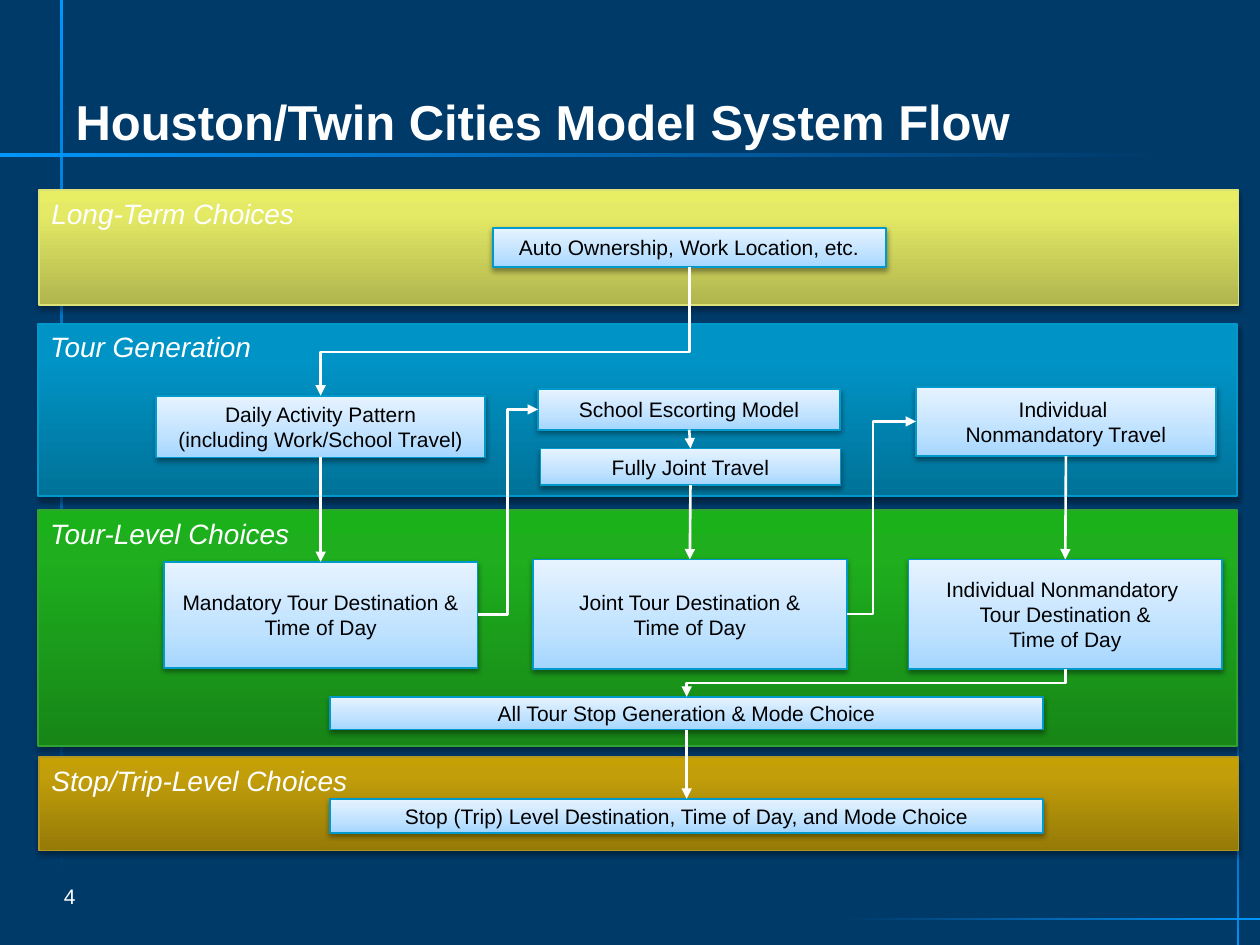
"""Build the travel model system flow slide on a grid of 100 columns by 75 rows."""
from typing import Any, NamedTuple

from lxml.etree import SubElement
from pptx import Presentation
from pptx.dml.color import RGBColor
from pptx.enum.shapes import MSO_CONNECTOR, MSO_SHAPE
from pptx.enum.text import MSO_ANCHOR, PP_ALIGN
from pptx.oxml.ns import qn
from pptx.util import Inches, Pt

WHITE, BLACK, NAVY, EDGE = "FFFFFF", "000000", "003A69", "0099CC"
BOX_STOPS = [(0, "A5D6FF"), (35, "BFE2FF"), (100, "E7F3FF")]
GUIDE_STOPS = [(0, "0099FF"), (100, "0C92FF", 0)]
TOP, LEFT, BOTTOM, RIGHT = range(4)

presentation = Presentation()
presentation.slide_width, presentation.slide_height = Inches(10), Inches(7.5)
COLUMN = presentation.slide_width / 100
ROW = presentation.slide_height / 75


class Area(NamedTuple):
    left: float
    top: float
    width: float
    height: float


class Guide(NamedTuple):
    area: Area
    rotation: int


class Panel(NamedTuple):
    text: str
    area: Area
    edge: str
    shades: tuple


class Box(NamedTuple):
    text: str
    area: Area


class Link(NamedTuple):
    begin: str
    begin_site: int
    end: str
    end_site: int
    bend: float = 0


GUIDES = [
    Guide(Area(45.2, -34.7, 0.25, 94), 270),
    Guide(Area(4.8, -0.9, 0.2, 70.7), 0),
    Guide(Area(83.8, 56.2, 0.1, 33.5), 90),
    Guide(Area(98.2, 50.4, 0.1, 26.4), 180),
]
PANELS = [
    Panel("Long-Term Choices", Area(3.1, 15.1, 95.2, 9.1), "DDE278",
          ("B0B54E", "E4EA65", "E7EE63")),
    Panel("Tour Generation", Area(3, 25.7, 95.2, 13.7), EDGE,
          ("007298", "0094C6", "0095C7")),
    Panel("Tour-Level Choices", Area(3, 40.5, 95.2, 18.7), "30A230",
          ("178617", "1EAE1E", "1BB11B")),
    Panel("Stop/Trip-Level Choices", Area(3.1, 60.1, 95.2, 7.4), "B29620",
          ("957A08", "C29E0A", "C6A106")),
]
BOXES = {
    "ownership": Box("Auto Ownership, Work Location, etc.", Area(39.1, 18.1, 31.2, 3.1)),
    "daily": Box("Daily Activity Pattern\n(including Work/School Travel)",
                 Area(12.4, 31.4, 26.1, 4.9)),
    "school": Box("School Escorting Model", Area(42.7, 30.9, 24, 3.2)),
    "joint": Box("Fully Joint Travel", Area(42.9, 35.6, 23.8, 2.9)),
    "individual": Box("Individual \nNonmandatory Travel", Area(72.7, 30.7, 23.8, 5.5)),
    "mandatory tour": Box("Mandatory Tour Destination &\nTime of Day",
                          Area(13, 44.6, 24.9, 8.4)),
    "joint tour": Box("Joint Tour Destination &\nTime of Day", Area(42.3, 44.4, 24.9, 8.7)),
    "individual tour": Box("Individual Nonmandatory \nTour Destination &\nTime of Day",
                           Area(72.1, 44.4, 24.9, 8.7)),
    "all tours": Box("All Tour Stop Generation & Mode Choice", Area(26.2, 55.3, 56.6, 2.6)),
    "stops": Box("Stop (Trip) Level Destination, Time of Day, and Mode Choice",
                 Area(26.2, 63.4, 56.6, 2.7)),
}
LINKS = [
    Link("daily", BOTTOM, "mandatory tour", TOP),
    Link("school", BOTTOM, "joint", TOP),
    Link("joint", BOTTOM, "joint tour", TOP),
    Link("individual", BOTTOM, "individual tour", TOP),
    Link("all tours", BOTTOM, "stops", TOP),
    Link("mandatory tour", RIGHT, "school", LEFT, 0.5),
    Link("joint tour", RIGHT, "individual", LEFT, 0.38),
    Link("ownership", BOTTOM, "daily", TOP, 0.66),
    Link("individual tour", BOTTOM, "all tours", TOP, 0.5),
]


def color(value: str) -> RGBColor:
    """Turn a hex string into a colour."""
    return RGBColor.from_string(value)


def place(area: Area) -> tuple:
    """Turn grid columns and rows into slide lengths."""
    return (round(area.left * COLUMN), round(area.top * ROW),
            round(area.width * COLUMN), round(area.height * ROW))


def apply(target: Any, values: dict) -> None:
    """Set each named attribute on the target."""
    for name, value in values.items():
        setattr(target, name, value)


def write(shape: Any, text: str, size: float, ink: str, align: PP_ALIGN,
          anchor: MSO_ANCHOR, **style: bool) -> None:
    """Put formatted text in a shape."""
    apply(shape.text_frame, {"word_wrap": True, "vertical_anchor": anchor})
    paragraph = shape.text_frame.paragraphs[0]
    paragraph.text = text
    paragraph.alignment = align
    for run in paragraph.runs:
        apply(run.font, {"name": "Arial", "size": Pt(size), **style})
        run.font.color.rgb = color(ink)


def add_gradient_rectangle(slide: Any, area: Area, stops: list, angle: int) -> Any:
    """Draw a rectangle with a linear gradient of (share, colour, opacity) stops."""
    shape = slide.shapes.add_shape(MSO_SHAPE.RECTANGLE, *place(area))
    shape.shadow.inherit = False
    shape.fill.gradient()
    shape.fill.gradient_angle = angle
    stop_list = shape._element.spPr.find(".//" + qn("a:gsLst"))
    for old_stop in list(stop_list):
        stop_list.remove(old_stop)
    for share, value, *opacity in stops:
        stop = SubElement(stop_list, qn("a:gs"), pos=str(share * 1000))
        shade = SubElement(stop, qn("a:srgbClr"), val=value)
        for percent in opacity:
            SubElement(shade, qn("a:alpha"), val=str(percent * 1000))
    return shape


def add_guide(slide: Any, guide: Guide) -> None:
    """Draw one fading guide line."""
    shape = add_gradient_rectangle(slide, guide.area, GUIDE_STOPS, 270)
    shape.rotation = guide.rotation
    shape.line.fill.background()


def add_card(slide: Any, area: Area, stops: list, edge: str, opacity: int,
             distance: float) -> Any:
    """Draw an outlined gradient rectangle with a soft shadow below."""
    shape = add_gradient_rectangle(slide, area, stops, 90)
    shape.line.color.rgb = color(edge)
    shape.line.width = Pt(1)
    effects = shape._element.spPr.find(qn("a:effectLst"))
    shadow = SubElement(effects, qn("a:outerShdw"), blurRad=str(Pt(3.1)),
                        dist=str(Pt(distance)), dir="5400000", rotWithShape="0")
    shade = SubElement(shadow, qn("a:srgbClr"), val=BLACK)
    SubElement(shade, qn("a:alpha"), val=str(opacity * 1000))
    return shape


def add_panel(slide: Any, panel: Panel) -> None:
    """Draw one stage panel with its heading."""
    stops = list(zip((0, 80, 100), panel.shades))
    shape = add_card(slide, panel.area, stops, panel.edge, 35, 1.8)
    write(shape, panel.text, 16, WHITE, PP_ALIGN.JUSTIFY, MSO_ANCHOR.TOP, italic=True)


def add_box(slide: Any, box: Box) -> Any:
    """Draw one model step."""
    shape = add_card(slide, box.area, BOX_STOPS, EDGE, 38, 1.6)
    write(shape, box.text, 12, BLACK, PP_ALIGN.CENTER, MSO_ANCHOR.MIDDLE)
    return shape


def add_link(slide: Any, link: Link, steps: dict) -> None:
    """Draw an arrow between two steps, straight or with one bend share."""
    begin, end = steps[link.begin], steps[link.end]
    kind = MSO_CONNECTOR.ELBOW if link.bend else MSO_CONNECTOR.STRAIGHT
    connector = slide.shapes.add_connector(kind, 0, 0, 0, 0)
    properties = connector._element.spPr
    if link.bend and link.begin_site == BOTTOM:
        begin_x, end_x = (step.left + step.width // 2 for step in (begin, end))
        begin_y = begin.top + begin.height
        drop, span = end.top - begin_y, begin_x - end_x
        apply(connector, {"left": (begin_x + end_x - drop) // 2,
                          "top": (begin_y + end.top - span) // 2,
                          "width": drop, "height": span})
        properties.find(qn("a:xfrm")).set("rot", "5400000")
    else:
        connector.begin_connect(begin, link.begin_site)
        connector.end_connect(end, link.end_site)
    if link.bend:
        SubElement(properties.find(".//" + qn("a:avLst")), qn("a:gd"), name="adj1",
                   fmla=f"val {round(link.bend * 100000)}")
    connector.line.color.rgb = color(WHITE)
    connector.line.width = Pt(1.5)
    SubElement(properties.find(qn("a:ln")), qn("a:tailEnd"), type="triangle")
    SubElement(properties, qn("a:effectLst"))


def main() -> None:
    """Build and save the slide."""
    slide = presentation.slides.add_slide(presentation.slide_layouts[5])
    slide.background.fill.solid()
    slide.background.fill.fore_color.rgb = color(NAVY)
    for guide in GUIDES:
        add_guide(slide, guide)
    title = slide.shapes.title
    apply(title, dict(zip(Area._fields, place(Area(5, -0.1, 90, 12.5)))))
    write(title, "Houston/Twin Cities Model System Flow", 28, WHITE, PP_ALIGN.LEFT,
          MSO_ANCHOR.BOTTOM, bold=True)
    for panel in PANELS:
        add_panel(slide, panel)
    steps = {name: add_box(slide, box) for name, box in BOXES.items()}
    for link in LINKS:
        add_link(slide, link, steps)
    number = slide.shapes.add_textbox(*place(Area(4.1, 69.1, 7.3, 4)))
    write(number, "4", 12, WHITE, PP_ALIGN.LEFT, MSO_ANCHOR.MIDDLE)
    presentation.save("out.pptx")


if __name__ == "__main__":
    main()
